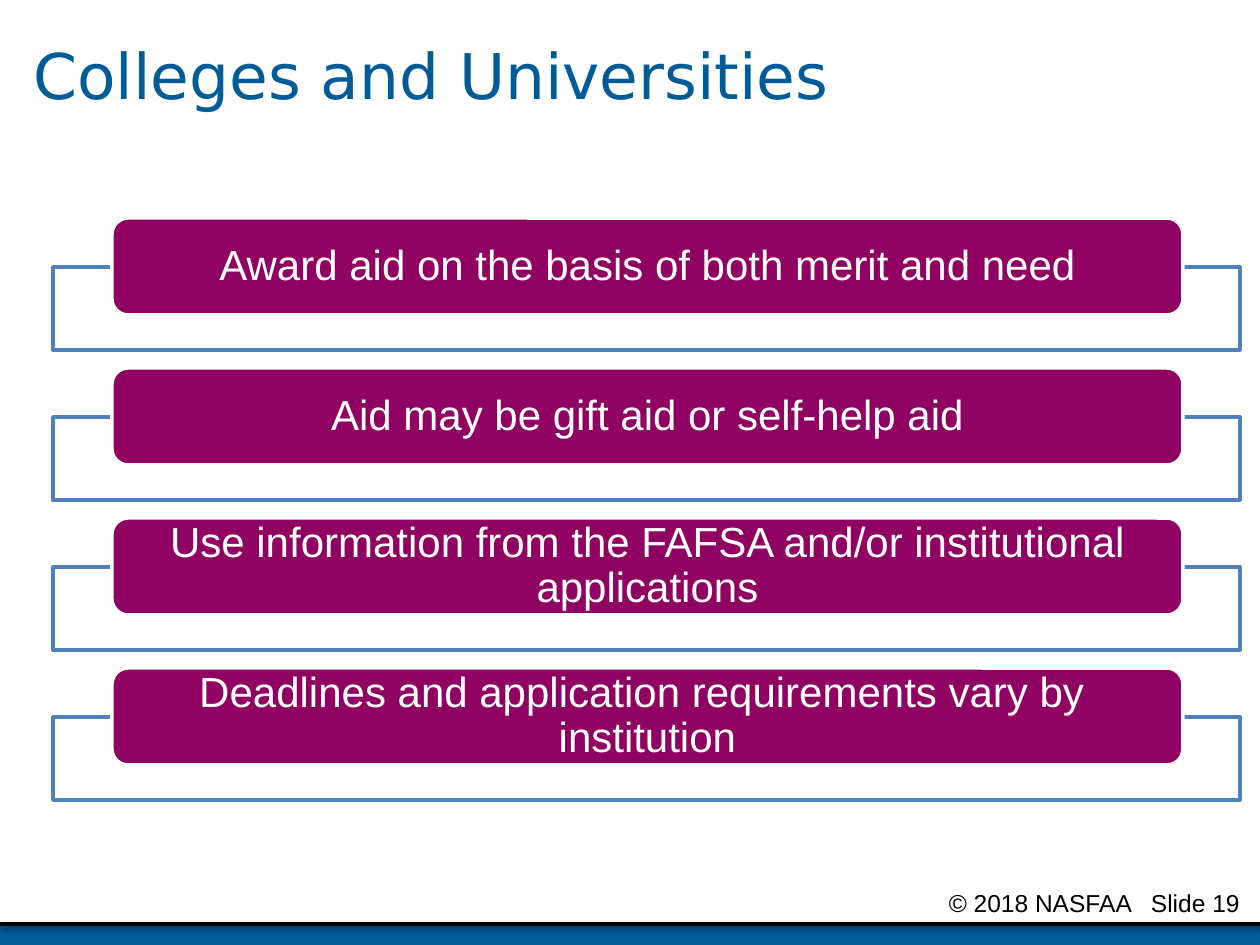
from lxml.etree import SubElement
from pptx import Presentation
from pptx.dml.color import RGBColor
from pptx.enum.shapes import MSO_CONNECTOR, MSO_SHAPE
from pptx.enum.text import MSO_ANCHOR, PP_ALIGN
from pptx.oxml import parse_xml
from pptx.oxml.ns import nsdecls
from pptx.util import Pt

PX = 914400 / 126
BLUE, PURPLE, WHITE, BLACK = "005B99", "900261", "FFFFFF", "000000"
OUTLINE = "4F81BD"
POINTS = [
    "Award aid on the basis of both merit and need",
    "Aid may be gift aid or self-help aid",
    "Use information from the FAFSA and/or institutional applications",
    "Deadlines and application requirements vary by \vinstitution",
]


def add_box(preset, bounds, fill, line=None):
    box = slide.shapes.add_shape(preset, *(round(v * PX) for v in bounds))
    box.shadow.inherit = False
    box.fill.solid()
    box.fill.fore_color.rgb = RGBColor.from_string(fill)
    if line:
        box.line.color.rgb = RGBColor.from_string(line)
        box.line.width = Pt(2)
    else:
        box.line.fill.background()
    return box


def write(shape, text, font, size, color, align, spacing=1.0):
    frame = shape.text_frame
    frame.word_wrap = True
    frame.text = text
    paragraph = frame.paragraphs[0]
    paragraph.alignment = align
    paragraph.line_spacing = spacing
    for run in paragraph.runs:
        run.font.name = font
        run.font.size = Pt(size)
        run.font.color.rgb = RGBColor.from_string(color)
    return frame


deck = Presentation()
deck.slide_width, deck.slide_height = round(1260 * PX), round(945 * PX)
slide = deck.slides.add_slide(deck.slide_layouts[6])

# Footer band, rule and copyright line
add_box(MSO_SHAPE.RECTANGLE, (0, 924, 1260, 25), BLUE)
rule_y = round(924 * PX)
rule = slide.shapes.add_connector(MSO_CONNECTOR.STRAIGHT, 0, rule_y, deck.slide_width, rule_y)
rule.line.color.rgb = RGBColor.from_string(BLACK)
rule.line.width = Pt(2)
effects = parse_xml(f"<a:effectLst {nsdecls('a')}>"
                    '<a:outerShdw blurRad="40000" dist="20000" dir="5400000" rotWithShape="0">'
                    '<a:srgbClr val="000000"><a:alpha val="38000"/></a:srgbClr>'
                    "</a:outerShdw></a:effectLst>")
rule._element.spPr.append(effects)

footer = slide.shapes.add_textbox(*(round(v * PX) for v in (788, 882, 472, 32)))
footer_frame = write(footer, "© 2018 NASFAA   Slide 19", "Arial", 14, BLACK, PP_ALIGN.RIGHT)
footer_frame.margin_right = round(20 * PX)

title = slide.shapes.add_textbox(*(round(v * PX) for v in (21, 0, 1218, 158)))
title_frame = write(title, "Colleges and Universities", "DejaVu Sans", 36, BLUE,
                    PP_ALIGN.LEFT, 0.9)
title_frame.vertical_anchor = MSO_ANCHOR.MIDDLE

# Each point: an outlined frame with a label over its top edge
for row, point in enumerate(POINTS):
    top = 218 + 150 * row
    add_box(MSO_SHAPE.RECTANGLE, (53, top + 49, 1187, 83), WHITE, OUTLINE)
    label = add_box(MSO_SHAPE.ROUNDED_RECTANGLE, (112, top, 1071, 97), PURPLE, WHITE)
    frame = write(label, point, "Arial", 24, WHITE, PP_ALIGN.CENTER, 0.9)
    frame.vertical_anchor = MSO_ANCHOR.MIDDLE
    frame.margin_left = frame.margin_right = round(32 * PX)
    frame.margin_top = frame.margin_bottom = 0

deck.save("out.pptx")
